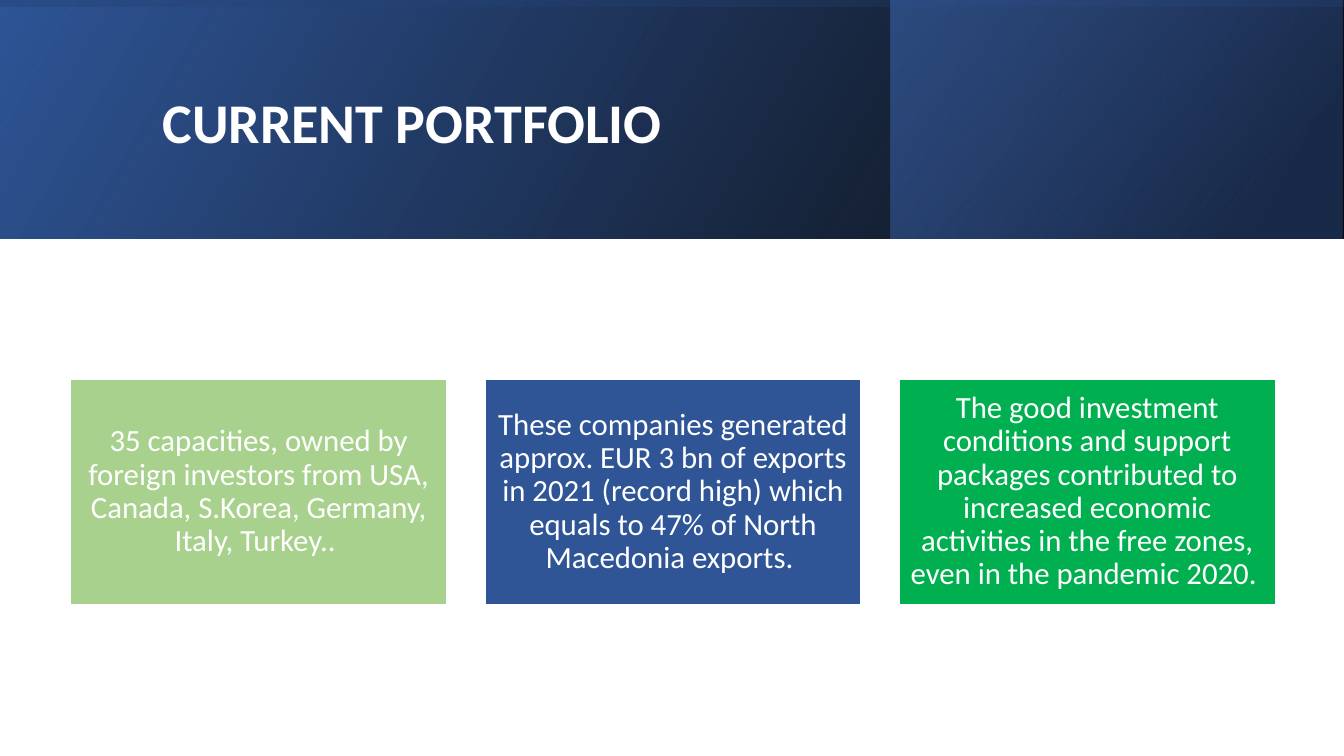
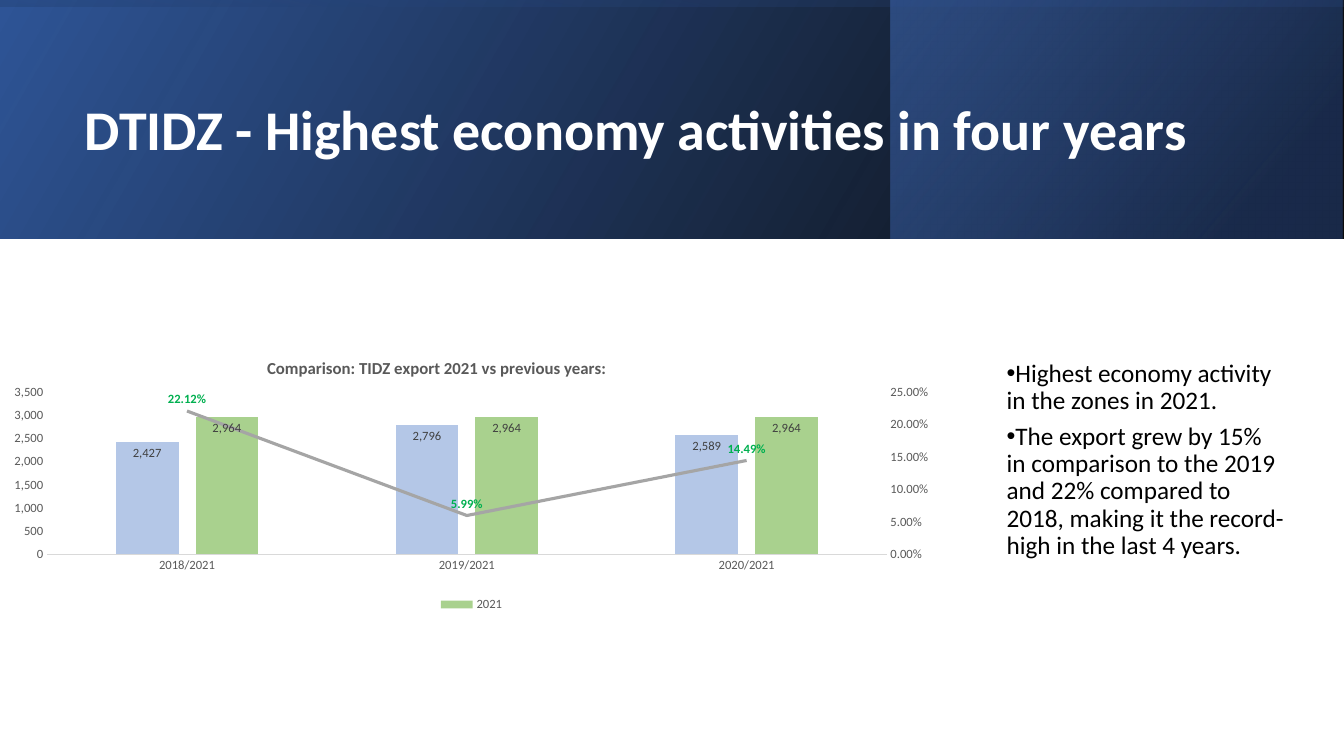
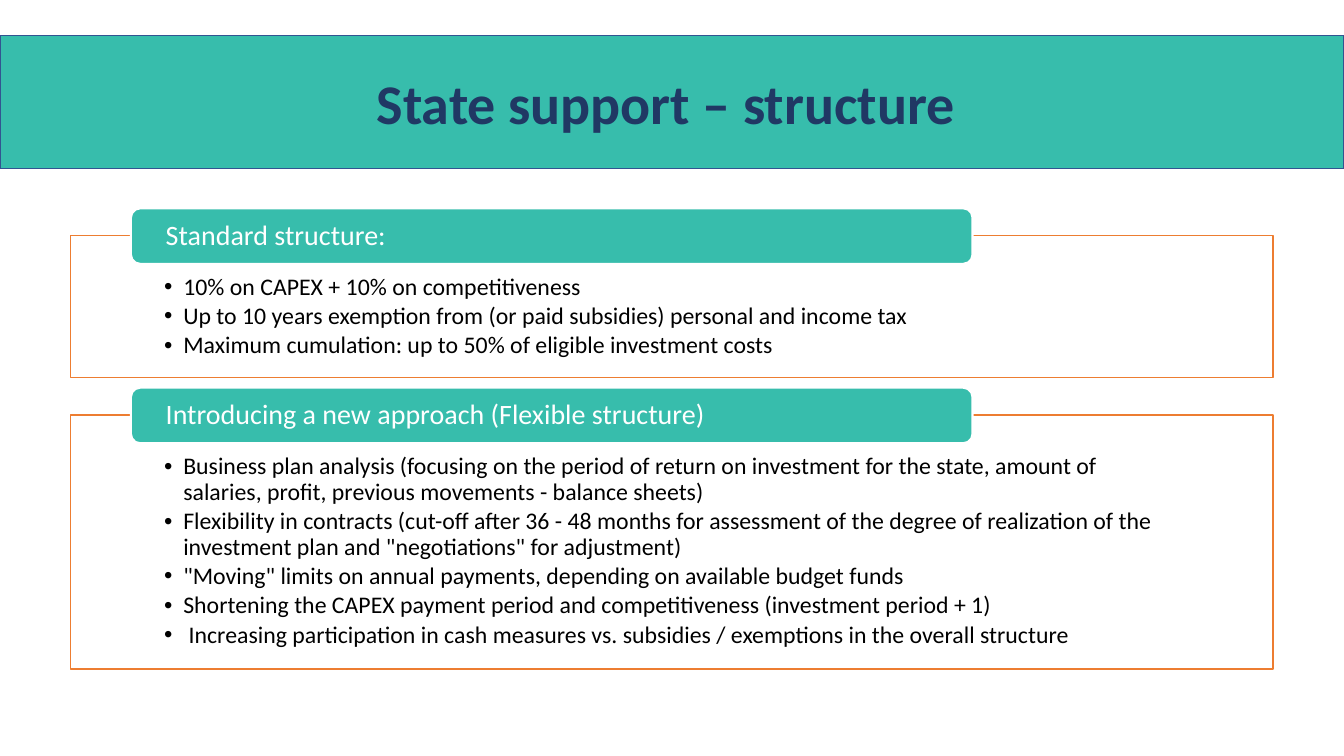
from copy import deepcopy

from pptx import Presentation
from pptx.chart.axis import CategoryAxis, ValueAxis
from pptx.chart.data import CategoryChartData
from pptx.dml.color import RGBColor
from pptx.enum.chart import XL_CHART_TYPE, XL_LABEL_POSITION, XL_LEGEND_POSITION, XL_MARKER_STYLE, XL_TICK_MARK
from pptx.enum.shapes import MSO_SHAPE
from pptx.enum.text import MSO_ANCHOR, MSO_AUTO_SIZE, PP_ALIGN
from pptx.oxml import parse_xml
from pptx.oxml.ns import nsdecls, qn
from pptx.util import Cm, Pt

RECTANGLE, ROUNDED = MSO_SHAPE.RECTANGLE, MSO_SHAPE.ROUNDED_RECTANGLE
LEFT, CENTER = PP_ALIGN.LEFT, PP_ALIGN.CENTER
TOP, MIDDLE = MSO_ANCHOR.TOP, MSO_ANCHOR.MIDDLE
NO_TICK = XL_TICK_MARK.NONE
INSIDE_END, ABOVE = XL_LABEL_POSITION.INSIDE_END, XL_LABEL_POSITION.ABOVE

FONT = "Calibri"
WHITE, BLACK = "FFFFFF", "000000"
NAVY, BLUE, SKY, PALE_BLUE = "203864", "2F5597", "4472C4", "B4C7E7"
LIGHT_GREEN, GREEN, TEAL = "A9D18E", "00B050", "37BDAC"
ORANGE, TITLE_EDGE = "ED7D31", "325491"
GRAY, DARK_GRAY, TEXT_GRAY, PALE_GRAY = "A5A5A5", "404040", "595959", "D9D9D9"
PAGE_WIDTH, PAGE_HEIGHT, BAND_HEIGHT = 33.87, 19.05, 6.02

CARDS = [
    ("35 capacities, owned by foreign investors from USA, Canada, S.Korea, Germany, Italy, Turkey.. ", LIGHT_GREEN),
    ("These companies generated approx. EUR 3 bn of exports in 2021 (record high) which equals to 47% "
     "of North Macedonia exports. ", BLUE),
    ("The good investment conditions and support packages contributed to increased economic activities "
     "in the free zones, even in the pandemic 2020. ", GREEN),
]
FINDINGS = [
    "Highest economy activity in the zones in 2021.",
    "The export grew by 15% in comparison to the 2019 and 22% compared to 2018, making it the "
    "record-high in the last 4 years.",
]
STANDARD = [
    "10% on CAPEX + 10% on competitiveness",
    "Up to 10 years exemption from (or paid subsidies) personal and income tax",
    "Maximum cumulation: up to 50% of eligible investment costs",
]
FLEXIBLE = [
    "Business plan analysis (focusing on the period of return on investment for the state, amount of "
    "salaries, profit, previous movements - balance sheets)",
    "Flexibility in contracts (cut-off after 36 - 48 months for assessment of the degree of realization "
    'of the investment plan and "negotiations" for adjustment)',
    '"Moving" limits on annual payments, depending on available budget funds',
    "Shortening the CAPEX payment period and competitiveness (investment period + 1)",
    " Increasing participation in cash measures vs. subsidies / exemptions in the overall structure",
]


def rgb(code):
    """Turn a hex string into a colour."""
    return RGBColor.from_string(code)


def style_font(font, size, color, bold=False):
    """Set the shared typeface with a size, colour and weight."""
    font.name, font.size, font.bold = FONT, Pt(size), bold
    font.color.rgb = rgb(color)


def write(box, lines, size, color, bold=False, align=LEFT, anchor=TOP, spacing=0.9, after=0, insets=None):
    """Fill a box with one paragraph per line."""
    frame = box.text_frame
    frame.text = "\n".join(lines)
    frame.word_wrap, frame.auto_size = True, MSO_AUTO_SIZE.NONE
    frame.vertical_anchor = anchor
    if insets:
        frame.margin_left, frame.margin_top, frame.margin_right, frame.margin_bottom = map(Cm, insets)
    for para in frame.paragraphs:
        para.alignment, para.line_spacing = align, spacing
        para.space_before, para.space_after = Pt(0), Pt(after)
        for span in para.runs:
            style_font(span.font, size, color, bold)


def add_bullets(box, margin, hang):
    """Give every paragraph of a box a round bullet."""
    for para in box.text_frame.paragraphs:
        properties = para._p.get_or_add_pPr()
        properties.set("marL", str(Cm(margin)))
        properties.set("indent", str(Cm(-hang)))
        properties.append(parse_xml(f'<a:buFont {nsdecls("a")} typeface="Arial"/>'))
        properties.append(parse_xml(f'<a:buChar {nsdecls("a")} char="•"/>'))


def add_box(page, kind, bounds, fill=None, line=None, width=1):
    """Add a flat shape with an optional fill and outline."""
    box = page.shapes.add_shape(kind, *map(Cm, bounds))
    box.shadow.inherit = False
    paint(box, fill, line, width)
    return box


def paint(box, fill, line, width=1):
    """Set the fill and outline of a shape."""
    if fill:
        box.fill.solid()
        box.fill.fore_color.rgb = rgb(fill)
    else:
        box.fill.background()
    if line:
        box.line.color.rgb, box.line.width = rgb(line), Pt(width)
    else:
        box.line.fill.background()


def add_gradient(page, bounds, stops, angle, rotation=0):
    """Add a mirrored rectangle with a translucent gradient."""
    box = add_box(page, RECTANGLE, bounds)
    box.rotation = rotation
    properties = box.element.spPr
    properties.find(qn("a:xfrm")).set("flipH", "1")
    marks = "".join(
        f'<a:gs pos="{place * 1000}"><a:srgbClr val="{color}"><a:alpha val="{alpha * 1000}"/></a:srgbClr></a:gs>'
        for place, color, alpha in stops)
    gradient = parse_xml(
        f'<a:gradFill {nsdecls("a")} rotWithShape="1"><a:gsLst>{marks}</a:gsLst>'
        f'<a:lin ang="{angle * 60000}" scaled="0"/></a:gradFill>')
    properties.replace(properties.find(qn("a:noFill")), gradient)


def add_band(page):
    """Draw the blue header band from three gradients."""
    side = (PAGE_WIDTH - BAND_HEIGHT) / 2
    add_gradient(page, (0, 0, PAGE_WIDTH, BAND_HEIGHT), [(0, BLACK, 96), (100, BLUE, 100)], 330)
    add_gradient(page, (22.45, 0, 11.39, BAND_HEIGHT), [(19, NAVY, 68), (100, SKY, 48)], 320)
    add_gradient(page, (side, -side, BAND_HEIGHT, PAGE_WIDTH), [(23, BLUE, 16), (99, BLACK, 45)], 350, 270)


def place_title(page, text, bounds, color=WHITE, align=LEFT, spacing=0.9):
    """Move the title placeholder to the front and format it."""
    title = page.shapes.title
    title.element.getparent().append(title.element)
    title.left, title.top, title.width, title.height = map(Cm, bounds)
    write(title, [text], 40, color, True, align, MIDDLE, spacing)
    return title


def add_page(deck):
    """Add a slide with the title-only layout."""
    return deck.slides.add_slide(deck.slide_layouts[5])


def add_cards(page, left, top, width, height, gap):
    """Place the portfolio cards in a row."""
    for index, (text, fill) in enumerate(CARDS):
        card = add_box(page, RECTANGLE, (left + index * (width + gap), top, width, height), fill, WHITE)
        write(card, [text], 22, WHITE, align=CENTER, anchor=MIDDLE, insets=[0.23] * 4)


def set_layout(holder, index, mode="", **fractions):
    """Fix the place of a chart part as fractions of the chart."""
    for old in holder.findall(qn("c:layout")):
        holder.remove(old)
    target = f'<c:layoutTarget val="{mode}"/>' if mode else ""
    edges = '<c:xMode val="edge"/><c:yMode val="edge"/>'
    sizes = "".join(f'<c:{name} val="{value}"/>' for name, value in fractions.items())
    holder.insert(index, parse_xml(
        f'<c:layout {nsdecls("c")}><c:manualLayout>{target}{edges}{sizes}</c:manualLayout></c:layout>'))


def style_axis(axis, line=None):
    """Give an axis small grey labels without ticks or grid."""
    axis.has_major_gridlines = False
    axis.major_tick_mark = axis.minor_tick_mark = NO_TICK
    style_font(axis.tick_labels.font, 9, TEXT_GRAY)
    if line:
        axis.format.line.color.rgb, axis.format.line.width = rgb(line), Pt(0.75)
    else:
        axis.format.line.fill.background()


def scale_axis(axis, top, step, number_format):
    """Set the range and number format of a value axis."""
    axis.minimum_scale, axis.maximum_scale, axis.major_unit = 0, top, step
    axis.tick_labels.number_format = number_format
    axis.tick_labels.number_format_is_linked = False


def label_series(series, color, position, number_format, bold=False):
    """Show the values of a series."""
    labels = series.data_labels
    labels.show_value, labels.position = True, position
    labels.number_format, labels.number_format_is_linked = number_format, False
    style_font(labels.font, 9, color, bold)


def move_growth_to_line(chart):
    """Turn the last series into a line on a right-hand axis."""
    plot_area = chart.element.find(".//" + qn("c:plotArea"))
    bars = plot_area.find(qn("c:barChart"))
    growth = bars.findall(qn("c:ser"))[-1]
    for flag in growth.findall(qn("c:invertIfNegative")):
        growth.remove(flag)
    line_chart = parse_xml(
        f'<c:lineChart {nsdecls("c")}><c:grouping val="standard"/><c:varyColors val="0"/>'
        '<c:marker val="1"/><c:axId val="5001"/><c:axId val="5002"/></c:lineChart>')
    line_chart.insert(2, growth)
    bars.addnext(line_chart)
    categories = deepcopy(plot_area.find(qn("c:catAx")))
    values = deepcopy(plot_area.find(qn("c:valAx")))
    for axis, own, other in ((categories, "5001", "5002"), (values, "5002", "5001")):
        axis.find(qn("c:axId")).set("val", own)
        axis.find(qn("c:crossAx")).set("val", other)
    values.find(qn("c:axPos")).set("val", "r")
    values.find(qn("c:crosses")).set("val", "max")
    plot_area.findall(qn("c:valAx"))[-1].addnext(categories)
    categories.addnext(values)
    CategoryAxis(categories).visible = False
    scale_axis(ValueAxis(values), 0.25, 0.05, "0.00%")


def add_export_chart(page, bounds):
    """Add the export columns with the growth line."""
    data = CategoryChartData(number_format="#,##0")
    data.categories = ["2018/2021", "2019/2021", "2020/2021"]
    data.add_series("Series 1", [2427, 2796, 2589])
    data.add_series("2021", [2964] * 3)
    data.add_series("Series 3", [0.2212, 0.0599, 0.1449], "0.00%")
    chart = page.shapes.add_chart(XL_CHART_TYPE.COLUMN_CLUSTERED, *map(Cm, bounds), data).chart
    style_font(chart.font, 10, BLACK)

    chart.has_title = True
    heading = chart.chart_title.text_frame
    heading.text = "Comparison: TIDZ export 2021 vs previous years:"
    style_font(heading.paragraphs[0].runs[0].font, 12, TEXT_GRAY, True)
    set_layout(chart.chart_title.element, 1, x=0.28, y=0.06)

    style_axis(chart.category_axis, PALE_GRAY)
    style_axis(chart.value_axis)
    scale_axis(chart.value_axis, 3500, 500, "#,##0")
    move_growth_to_line(chart)
    set_layout(chart.element.find(".//" + qn("c:plotArea")), 0, "inner", x=0.05, y=0.2, w=0.89, h=0.58)

    columns, lines = chart.plots
    columns.gap_width, columns.overlap, columns.vary_by_categories = 219, -27, False
    for series, color in zip(columns.series, (PALE_BLUE, LIGHT_GREEN)):
        series.format.fill.solid()
        series.format.fill.fore_color.rgb = rgb(color)
        label_series(series, DARK_GRAY, INSIDE_END, "#,##0")
    growth = lines.series[0]
    growth.smooth, growth.marker.style = False, XL_MARKER_STYLE.NONE
    growth.format.line.color.rgb, growth.format.line.width = rgb(GRAY), Pt(2.25)
    label_series(growth, GREEN, ABOVE, "0.00%", True)

    chart.has_legend = True
    chart.legend.position, chart.legend.include_in_layout = XL_LEGEND_POSITION.BOTTOM, False
    style_font(chart.legend.font, 9, TEXT_GRAY)
    legend = chart.element.find(".//" + qn("c:legend"))
    for place, index in enumerate((0, 2), start=1):
        legend.insert(place, parse_xml(
            f'<c:legendEntry {nsdecls("c")}><c:idx val="{index}"/><c:delete val="1"/></c:legendEntry>'))


def add_panel(page, heading, lines, left, top, width, height):
    """Add an outlined bullet panel with a heading tab on its top edge."""
    panel = add_box(page, RECTANGLE, (left, top, width, height), WHITE, ORANGE)
    write(panel, lines, 17, BLACK, after=2.5, insets=(2.36, 0.99, 2.36, 0.33))
    add_bullets(panel, 0.48, 0.48)
    tab = add_box(page, ROUNDED, (left + 1.52, top - 0.69, 21.21, 1.4), TEAL, WHITE, 1.5)
    write(tab, [heading], 20, WHITE, anchor=MIDDLE, insets=(0.81, 0, 0.81, 0))


def build_portfolio(deck):
    """Build the slide with the three portfolio cards."""
    page = add_page(deck)
    add_band(page)
    place_title(page, "CURRENT PORTFOLIO", (3.84, 0.97, 27, 4.37))
    add_cards(page, 1.78, 9.55, 9.48, 5.69, 0.96)


def build_activity(deck):
    """Build the slide with the export chart and findings."""
    page = add_page(deck)
    add_band(page)
    place_title(page, "DTIDZ - Highest economy activities in four years", (1.88, 1.3, 28.4, 4.06))
    findings = page.shapes.add_textbox(*map(Cm, (25.12, 8.97, 7.54, 6.02)))
    write(findings, FINDINGS, 18, BLACK, after=6)
    add_bullets(findings, 0, 0.64)
    add_export_chart(page, (0, 8.48, 23.77, 7.04))


def build_support(deck):
    """Build the slide with the two support structures."""
    page = add_page(deck)
    add_panel(page, "Standard structure:", STANDARD, 1.78, 5.94, 30.3, 3.58)
    add_panel(page, "Introducing a new approach (Flexible structure)", FLEXIBLE, 1.78, 10.46, 30.3, 6.4)
    title = place_title(page, "State support – structure ", (0, 0.89, PAGE_WIDTH, 3.35), NAVY, CENTER, 1.0)
    paint(title, TEAL, TITLE_EDGE)


def main():
    """Build and save the deck."""
    deck = Presentation()
    deck.slide_width, deck.slide_height = Cm(PAGE_WIDTH), Cm(PAGE_HEIGHT)
    build_portfolio(deck)
    build_activity(deck)
    build_support(deck)
    deck.save("out.pptx")


if __name__ == "__main__":
    main()
